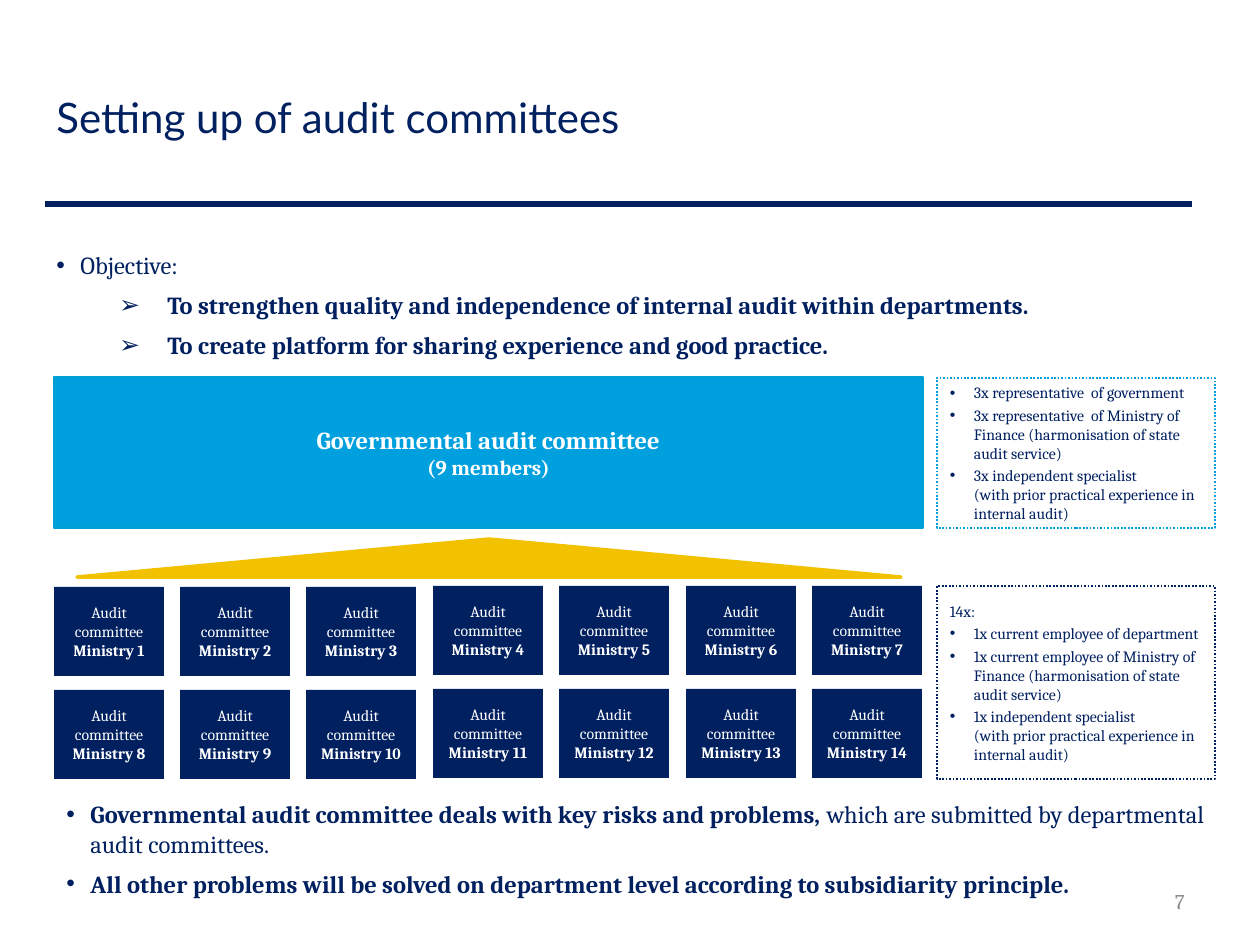
from copy import deepcopy

from lxml import etree
from pptx import Presentation
from pptx.dml.color import RGBColor
from pptx.enum.dml import MSO_LINE
from pptx.enum.shapes import MSO_CONNECTOR, MSO_SHAPE
from pptx.enum.text import MSO_ANCHOR, PP_ALIGN
from pptx.oxml.ns import qn
from pptx.util import Pt

PX = 914400 / 126
RECT, PENTAGON = MSO_SHAPE.RECTANGLE, MSO_SHAPE.PENTAGON
LEFT, CENTER, RIGHT = PP_ALIGN.LEFT, PP_ALIGN.CENTER, PP_ALIGN.RIGHT
TOP, MIDDLE = MSO_ANCHOR.TOP, MSO_ANCHOR.MIDDLE
DOTTED = MSO_LINE.ROUND_DOT
COLORS = {"navy": "002060", "blue": "00A0DE", "edge": "009FD4",
          "gold": "F2C200", "white": "FFFFFF", "gray": "8C8C8C"}
# Bullet sign -> text indent and hanging indent
INDENTS = {"•": (24, -24), "➢": (111, -48)}


def color(name):
    return RGBColor.from_string(COLORS[name])


def add_box(at, paras, size, ink="navy", align=LEFT, anchor=MIDDLE, gap=0,
            font="Cambria", fill=None, line=None, shape=None):
    """Each para is (bullet, [(text, bold), ...], optional size)."""
    at = [round(value * PX) for value in at]
    if shape is None:
        box = page.shapes.add_textbox(*at)
    else:
        box = page.shapes.add_shape(shape, *at)
        box.shadow.inherit = False
        if fill:
            box.fill.solid()
            box.fill.fore_color.rgb = color(fill)
        else:
            box.fill.background()
        if line:
            box.line.color.rgb = color(line[0])
            box.line.width = Pt(line[1])
        else:
            box.line.fill.background()
    frame = box.text_frame
    frame.word_wrap = True
    frame.vertical_anchor = anchor
    if shape is not None:
        frame.margin_left = frame.margin_right = round(13 * PX)
        frame.margin_top = frame.margin_bottom = round(13 * PX)

    for index, (bullet, spans, *own_size) in enumerate(paras):
        para = frame.add_paragraph() if index else frame.paragraphs[0]
        para.text = spans[0][0]
        for span in para.runs:
            span.font.bold = spans[0][1]
        for text, bold in spans[1:]:
            span = para.add_run()
            span.text = text
            span.font.bold = bold
        for span in para.runs:
            span.font.name = font
            span.font.size = Pt(own_size[0] if own_size else size)
            span.font.color.rgb = color(ink)
        # Line breaks take the text format too
        for line_break in para._p.findall(qn("a:br")):
            line_break.append(deepcopy(para.runs[0]._r.rPr))
        para.alignment = align
        para.space_before = para.space_after = Pt(gap)
        if bullet:
            props = para._p.get_or_add_pPr()
            margin, hanging = INDENTS[bullet]
            props.set("marL", str(round(margin * PX)))
            props.set("indent", str(round(hanging * PX)))
            etree.SubElement(props, qn("a:buFont")).set("typeface", "Arial")
            etree.SubElement(props, qn("a:buChar")).set("char", bullet)
    return box


deck = Presentation()
deck.slide_width, deck.slide_height = round(1260 * PX), round(945 * PX)
page = deck.slides.add_slide(deck.slide_layouts[6])

# Title and rule
add_box((44, 38, 1153, 158), [(None, [("Setting up of audit committees", False)])],
        24, font="Lato")
rule = page.shapes.add_connector(MSO_CONNECTOR.STRAIGHT, *[
    round(value * PX) for value in (45, 204, 1192, 204)])
rule.line.color.rgb = color("navy")
rule.line.width = Pt(3)
etree.SubElement(rule._element.spPr, qn("a:effectLst"))

# Objective
add_box((44, 244, 1181, 124), [
    ("•", [("Objective:", False)]),
    ("➢", [("To strengthen quality and independence of internal audit within departments.", True)]),
    ("➢", [("To create platform for sharing experience and good practice.", True)]),
], 14, anchor=TOP, gap=3)

# Governmental committee and the wedge pointing up to it
add_box((54, 377, 869, 151), [
    (None, [("Governmental audit committee", True)]),
    (None, [("(9 members)", True)], 12),
], 14, "white", CENTER, fill="blue", line=("edge", 1.5), shape=RECT)
wedge = add_box((470, 146, 38, 824), [], 12, fill="gold", line=("gold", 2), shape=PENTAGON)
wedge.adjustments[0] = 1
wedge.rotation = 270

# Ministry committees: two rows of seven, first three columns 1 px lower
for number in range(14):
    row, column = divmod(number, 7)
    top = 586 + 103 * row + (1 if column < 3 else 0)
    add_box((54 + column * 632 // 5, top, 110, 89), [
        (None, [("Audit committee", False)]),
        (None, [(f"Ministry {number + 1}", True)]),
    ], 9, "white", CENTER, fill="navy", shape=RECT)

# Membership notes
MEMBERS = [
    (378, 150, "blue", None, [
        "3x representative  of government",
        "3x representative  of Ministry of Finance (harmonisation of state audit service)",
        "3x independent specialist\n(with prior practical experience in internal audit)"]),
    (586, 193, "navy", "14x:", [
        "1x current employee of department",
        "1x current employee of Ministry of Finance (harmonisation of state audit service)",
        "1x independent specialist\n(with prior practical experience in internal audit)"]),
]
for top, height, edge, heading, members in MEMBERS:
    paras = [(None, [(heading, False)])] if heading else []
    paras += [("•", [(member, False)]) for member in members]
    note = add_box((937, top, 278, height), paras, 9, gap=1, line=(edge, 1), shape=RECT)
    note.line.dash_style = DOTTED

# Conclusions
add_box((54, 793, 1191, 112), [
    ("•", [("Governmental audit committee deals with key risks and problems, ", True),
           ("which are submitted by departmental audit committees.", False)]),
    ("•", [("All other problems will be solved on department level according to subsidiarity principle.", True)]),
], 14, anchor=TOP, gap=3)

# Page number
add_box((903, 876, 294, 50), [(None, [("7", False)])], 12, "gray", RIGHT)

deck.save("out.pptx")
